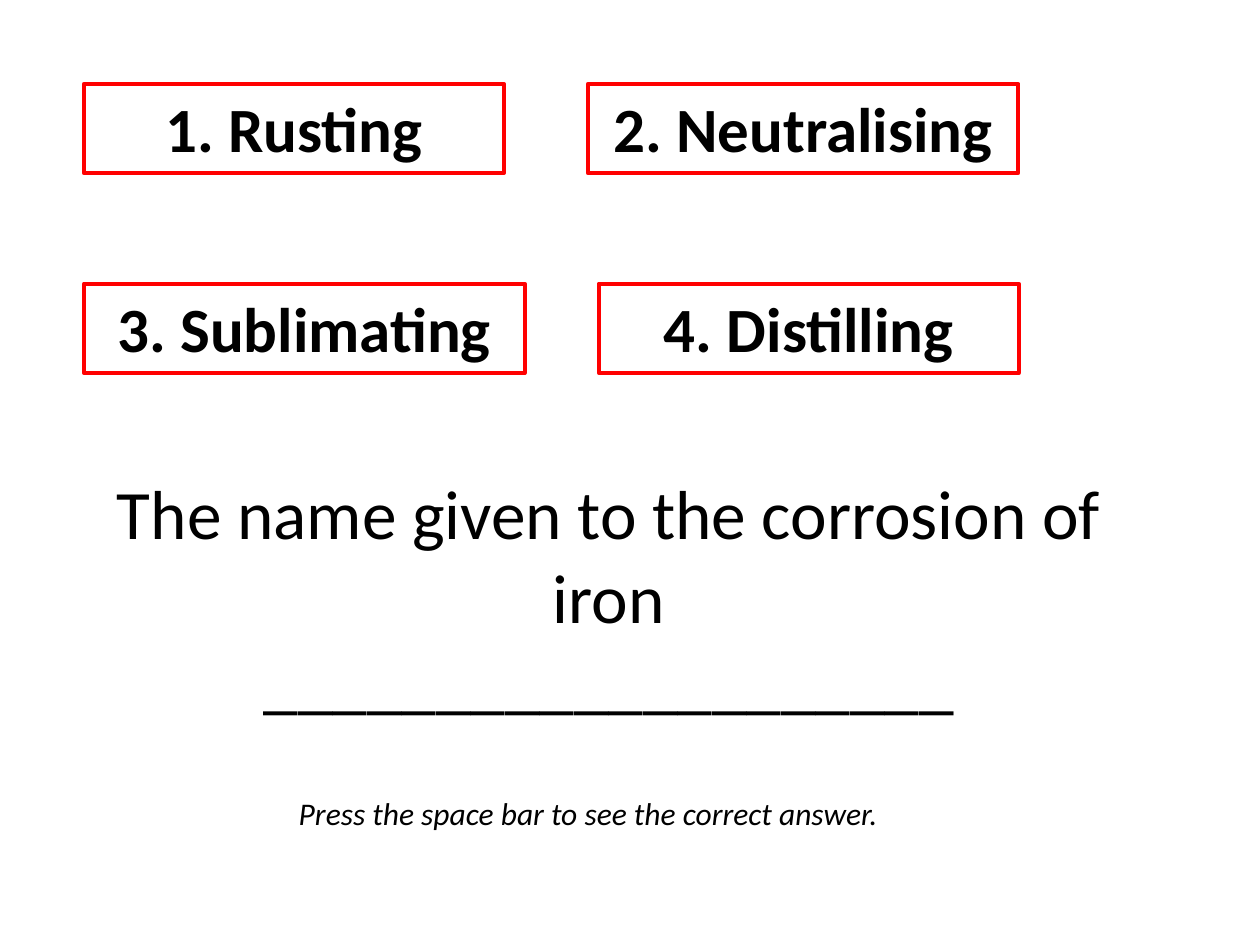
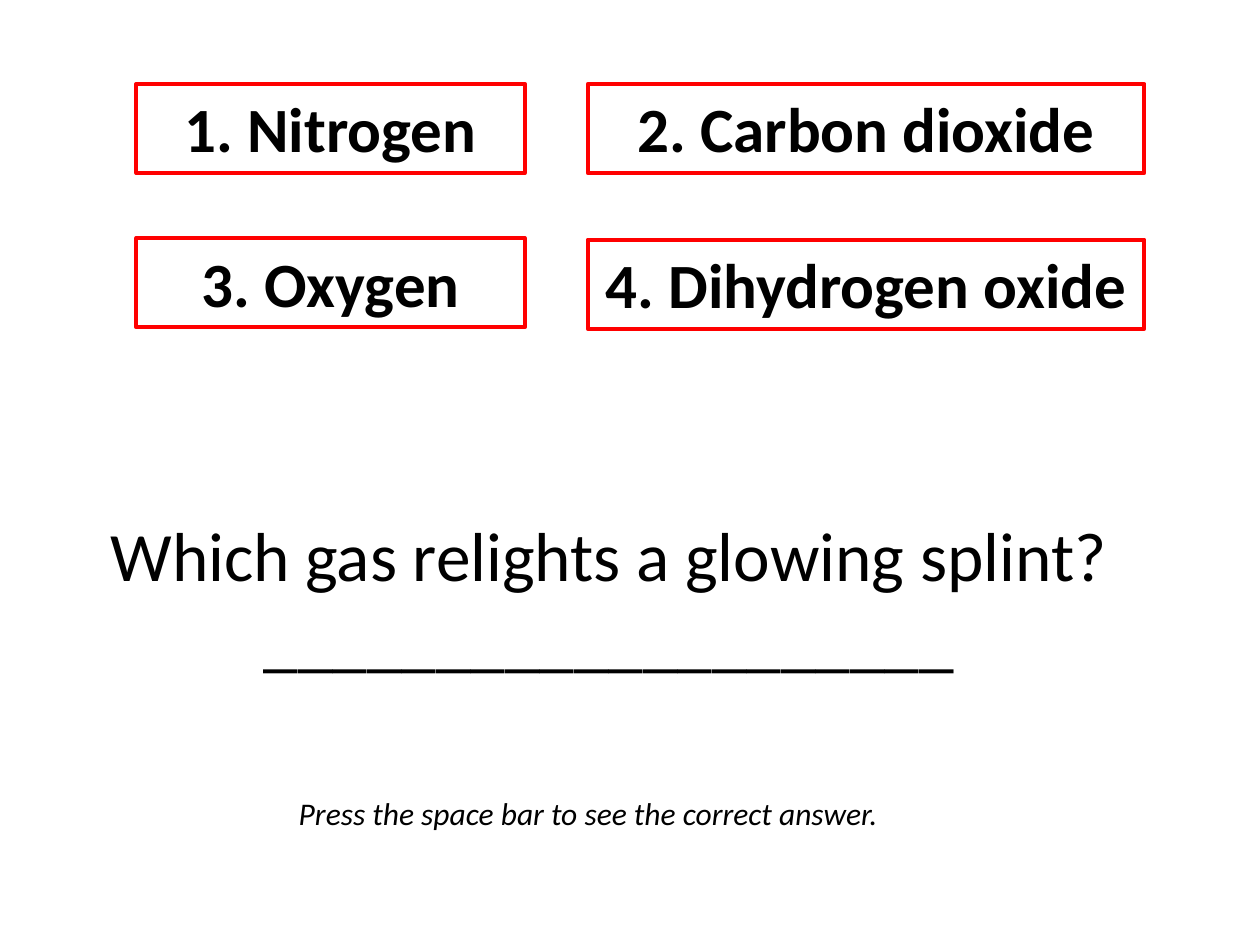
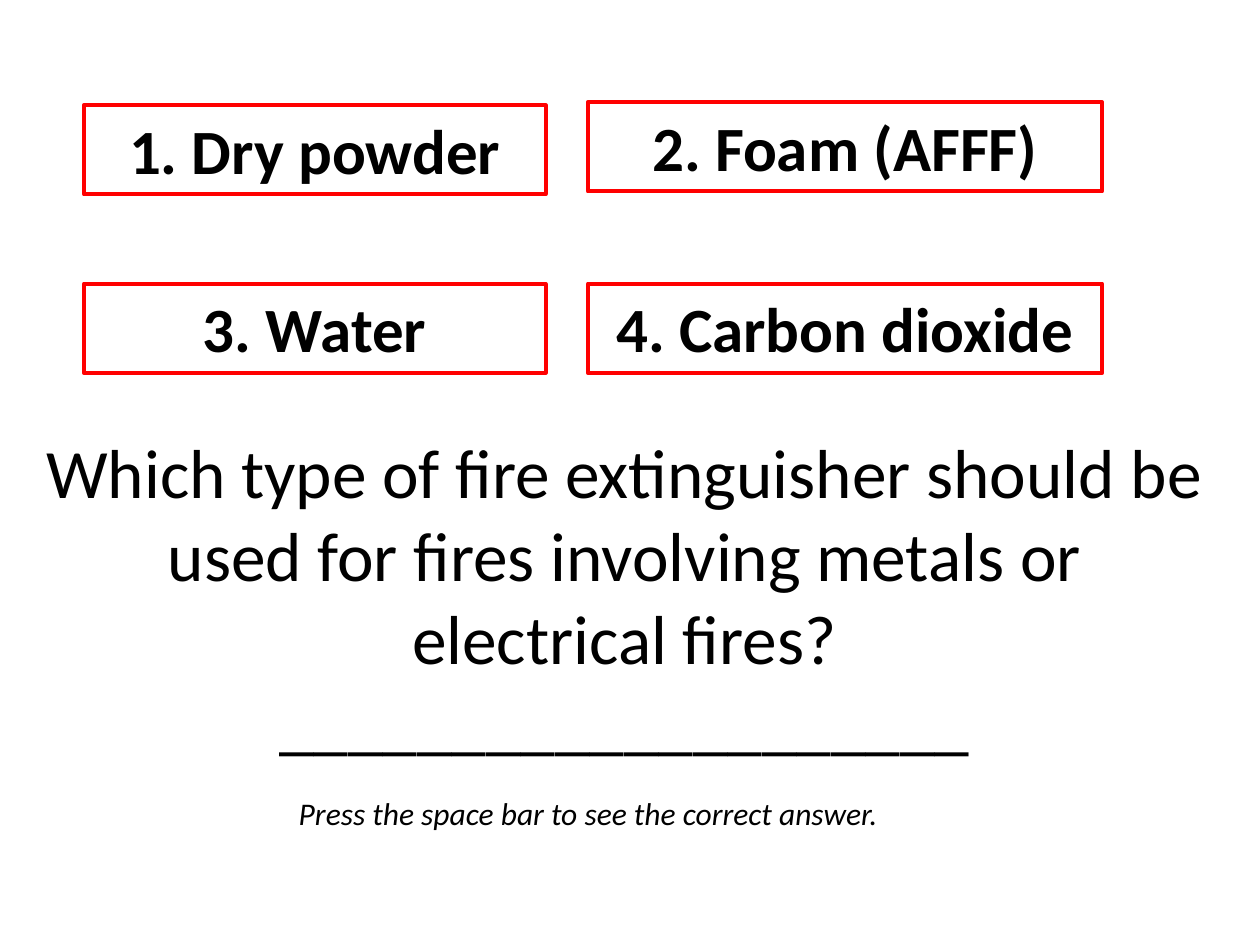
from pptx import Presentation
from pptx.dml.color import RGBColor
from pptx.enum import shapes, text
from pptx.util import Cm, Pt

BLACK = RGBColor(0x00, 0x00, 0x00)
RED = RGBColor(0xFF, 0x00, 0x00)
FONT = "Calibri"
BLANK_LINE = "_" * 20
PROMPT = "Press the space bar to see the correct answer."
ANSWER_HEIGHT = 1.8
QUESTION_TOP, QUESTION_HEIGHT = 9.95, 4.1
QUESTION_SPAN = (1.48, 21.59)

QUIZ = [
    {
        "question": "The name given to the corrosion of iron",
        "answers": [
            ("Rusting", 1.69, 1.69, 8.47),
            ("Neutralising", 11.85, 1.69, 8.68),
            ("Sublimating", 1.69, 5.72, 8.89),
            ("Distilling", 12.07, 5.72, 8.47),
        ],
    },
    {
        "question": "Which gas relights a glowing splint?",
        "answers": [
            ("Nitrogen", 2.75, 1.69, 7.83),
            ("Carbon dioxide", 11.85, 1.69, 11.22),
            ("Oxygen", 2.75, 4.8, 7.83),
            ("Dihydrogen oxide", 11.85, 4.83, 11.22),
        ],
    },
    {
        "question": "Which type of fire extinguisher should be used for "
                    "fires involving metals or electrical fires?",
        "span": (0.42, 24.34),
        "answers": [
            ("Dry powder", 1.69, 2.12, 9.31),
            ("Foam (AFFF)", 11.85, 2.06, 10.37),
            ("Water", 1.69, 5.72, 9.31),
            ("Carbon dioxide", 11.85, 5.72, 10.37),
        ],
    },
]


def write(frame, words, size, bold=False, italic=False,
          anchor=text.MSO_ANCHOR.TOP, fit=text.MSO_AUTO_SIZE.SHAPE_TO_FIT_TEXT):
    frame.word_wrap = True
    frame.auto_size = fit
    frame.vertical_anchor = anchor
    paragraph = frame.paragraphs[0]
    paragraph.alignment = text.PP_ALIGN.CENTER
    run_lines = words.split("\n")
    for index, line in enumerate(run_lines):
        if index:
            paragraph.add_line_break()
        run = paragraph.add_run()
        run.text = line
        run.font.name = FONT
        run.font.size = Pt(size)
        run.font.bold = bold
        run.font.italic = italic
        run.font.color.rgb = BLACK


def add_question(slide, question, left, width):
    title = slide.shapes.title
    title.left, title.top = Cm(left), Cm(QUESTION_TOP)
    title.width, title.height = Cm(width), Cm(QUESTION_HEIGHT)
    write(title.text_frame, f"{question}\n{BLANK_LINE}", 39.6,
          anchor=text.MSO_ANCHOR.MIDDLE, fit=text.MSO_AUTO_SIZE.NONE)


def add_answer(slide, answer, left, top, width):
    frame = slide.shapes.add_shape(
        shapes.MSO_SHAPE.RECTANGLE,
        Cm(left), Cm(top), Cm(width), Cm(ANSWER_HEIGHT))
    frame.shadow.inherit = False
    frame.fill.background()
    frame.line.color.rgb = RED
    frame.line.width = Pt(2.25)
    write(frame.text_frame, answer, 36, bold=True)


def add_prompt(slide):
    prompt = slide.shapes.add_textbox(Cm(3.18), Cm(15.88), Cm(17.36), Cm(1.03))
    write(prompt.text_frame, PROMPT, 18, italic=True)


def add_quiz_slide(deck, quiz):
    slide = deck.slides.add_slide(deck.slide_layouts[0])
    subtitle = slide.placeholders[1].element
    subtitle.getparent().remove(subtitle)
    add_question(slide, quiz["question"], *quiz.get("span", QUESTION_SPAN))
    for number, (answer, *place) in enumerate(quiz["answers"], start=1):
        add_answer(slide, f"{number}. {answer}", *place)
    add_prompt(slide)


def main():
    deck = Presentation()
    deck.slide_width, deck.slide_height = Cm(25.4), Cm(19.05)
    for quiz in QUIZ:
        add_quiz_slide(deck, quiz)
    deck.save("out.pptx")


if __name__ == "__main__":
    main()
